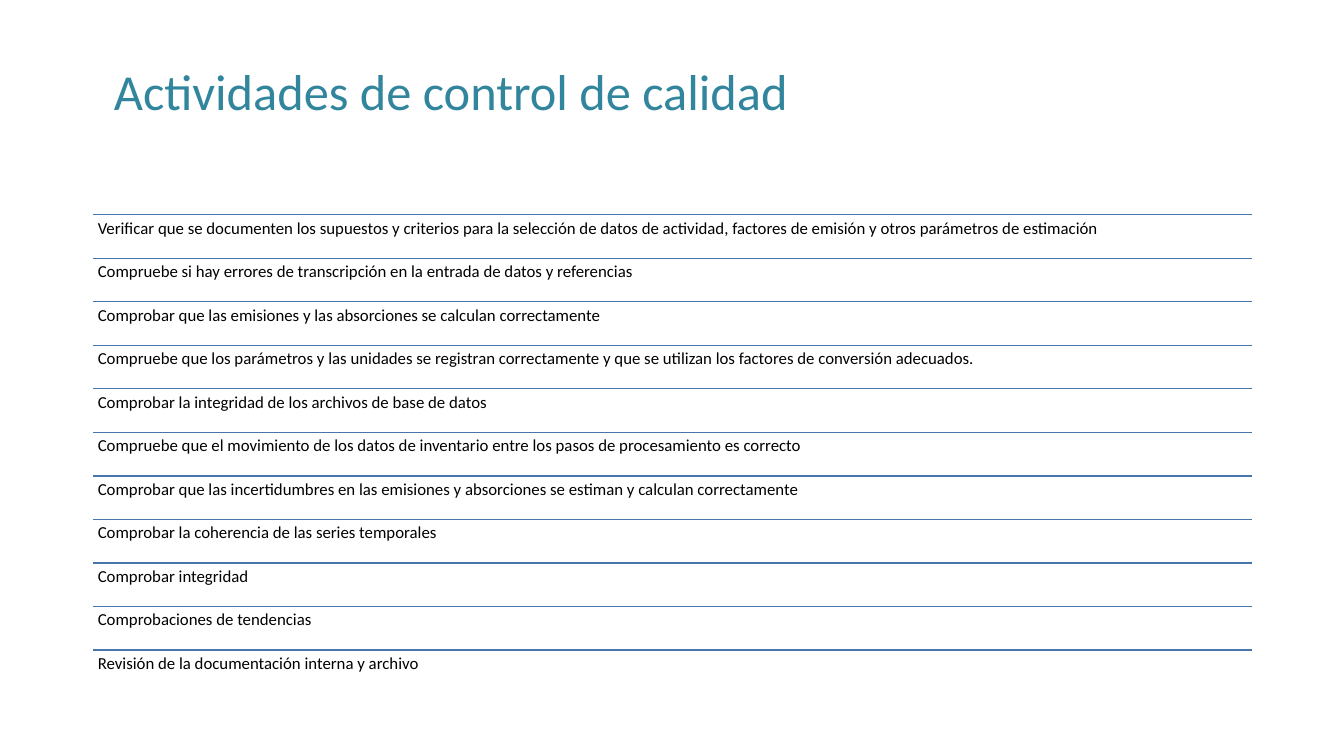
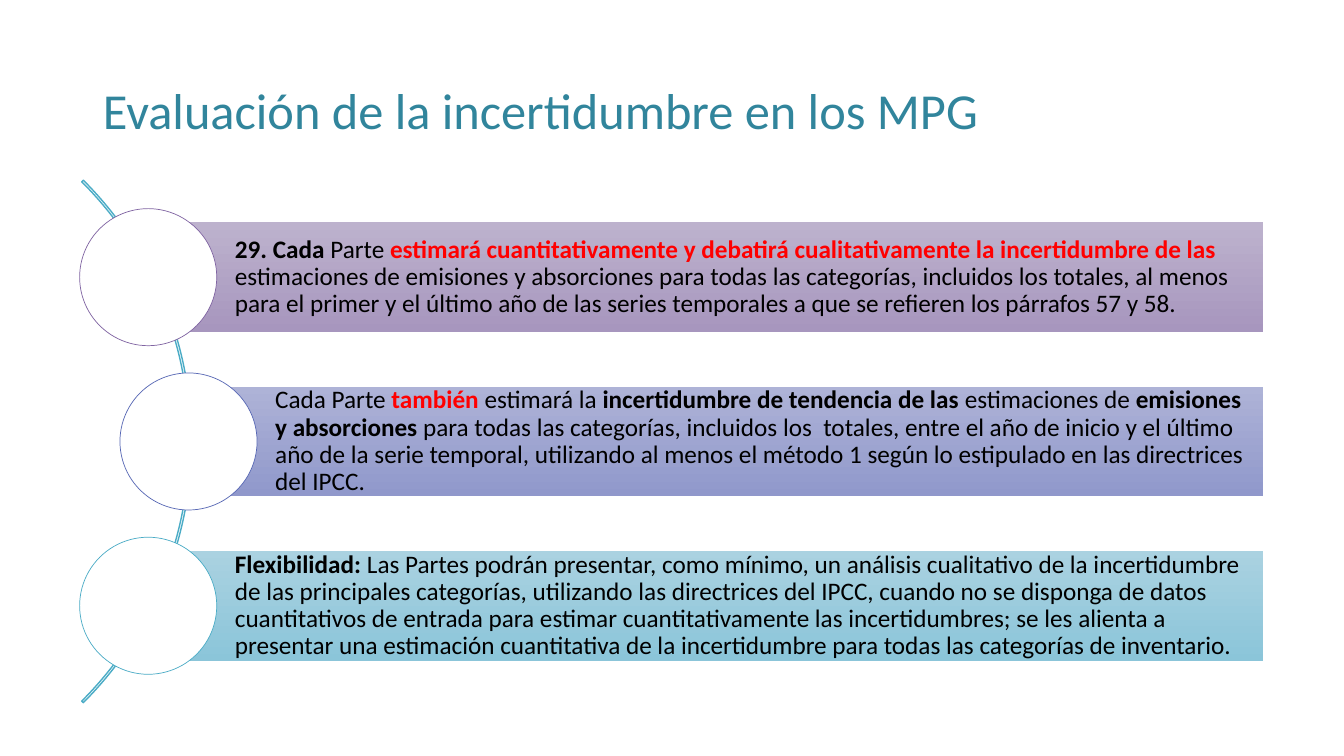
from lxml.etree import SubElement
from pptx import Presentation
from pptx.dml.color import RGBColor
from pptx.enum.shapes import MSO_CONNECTOR as Link, MSO_SHAPE as Shape
from pptx.enum.text import MSO_ANCHOR as Anchor, MSO_AUTO_SIZE as Auto, PP_ALIGN as Align
from pptx.oxml.ns import qn
from pptx.util import Inches, Pt

FONT = "Calibri"
TEAL, BLACK, RED, WHITE = "31859C", "000000", "FF0000", "FFFFFF"
RULE, ARC = "4875AC", "4BACC6"
BOLD = {"bold": True}
ALERT = {"bold": True, "color": RED}

CHECKS = [
    "Verificar que se documenten los supuestos y criterios para la selección de datos de actividad, "
    "factores de emisión y otros parámetros de estimación",
    "Compruebe si hay errores de transcripción en la entrada de datos y referencias",
    "Comprobar que las emisiones y las absorciones se calculan correctamente",
    "Compruebe que los parámetros y las unidades se registran correctamente y que se utilizan "
    "los factores de conversión adecuados.",
    "Comprobar la integridad de los archivos de base de datos",
    "Compruebe que el movimiento de los datos de inventario entre los pasos de procesamiento es correcto",
    "Comprobar que las incertidumbres en las emisiones y absorciones se estiman y calculan correctamente",
    "Comprobar la coherencia de las series temporales",
    "Comprobar integridad",
    "Comprobaciones de tendencias",
    "Revisión de la documentación interna y archivo",
]

# Each band: indent, gradient ends, circle outline, text runs
BANDS = [
    (0, ("BDB2CD", "A796BE"), "8064A2", [
        ("29. Cada ", BOLD),
        ("Parte ", {}),
        ("estimará cuantitativamente y debatirá cualitativamente la incertidumbre de las ", ALERT),
        ("estimaciones de emisiones y absorciones para todas las categorías, incluidos los totales, "
         "al menos para el primer y el último año de las series temporales a que se refieren "
         "los párrafos 57 y 58.", {}),
    ]),
    (0.4, ("AEB3D7", "9098CB"), "5767B4", [
        ("Cada Parte ", {}),
        ("también ", ALERT),
        ("estimará la ", {}),
        ("incertidumbre de tendencia de las ", BOLD),
        ("estimaciones de", {}),
        (" emisiones y absorciones", BOLD),
        (" para todas las categorías, incluidos los  totales, entre el año de inicio y el último año "
         "de la serie temporal, utilizando al menos el método 1 según lo estipulado en las directrices "
         "del IPCC.", {}),
    ]),
    (0, ("AAD2E1", "8BC5D9"), ARC, [
        ("Flexibilidad: ", BOLD),
        ("Las Partes podrán presentar, como mínimo, un análisis cualitativo de la incertidumbre de las "
         "principales categorías, utilizando las directrices del IPCC, cuando no se disponga de datos "
         "cuantitativos de entrada para estimar cuantitativamente las incertidumbres; se les alienta a "
         "presentar una estimación cuantitativa de la incertidumbre para todas las categorías de "
         "inventario.", {}),
    ]),
]


def rgb(code):
    return RGBColor.from_string(code)


def write(shape, runs, size, color=BLACK, anchor=Anchor.TOP, inset=0.05, lead=None):
    """Fill a shape with one paragraph; lead is the left inset if it differs."""
    frame = shape.text_frame
    frame.word_wrap = True
    frame.auto_size = Auto.NONE
    frame.vertical_anchor = anchor
    frame.margin_top = frame.margin_right = frame.margin_bottom = Inches(inset)
    frame.margin_left = Inches(inset if lead is None else lead)
    para = frame.paragraphs[0]
    para.alignment = Align.LEFT
    para.line_spacing = 0.9
    for text, style in runs:
        run = para.add_run()
        run.text = text
        font = run.font
        font.name, font.size = FONT, Pt(size)
        font.bold = style.get("bold", False)
        font.color.rgb = rgb(style.get("color", color))


def draw(slide, kind, box, fill=None, line=None, width=1):
    """Add a preset shape; a pair of fill colours makes a downward gradient."""
    shape = slide.shapes.add_shape(kind, *map(Inches, box))
    shape.shadow.inherit = False
    if fill is None:
        shape.fill.background()
    elif isinstance(fill, tuple):
        shape.fill.gradient()
        shape.fill.gradient_angle = 270
        for stop, place, code in zip(shape.fill.gradient_stops, (0, 1), fill):
            stop.position = place
            stop.color.rgb = rgb(code)
    else:
        shape.fill.solid()
        shape.fill.fore_color.rgb = rgb(fill)
    if line:
        shape.line.color.rgb = rgb(line)
        shape.line.width = Pt(width)
    else:
        shape.line.fill.background()
    return shape


def rule(slide, left, top, width):
    line = slide.shapes.add_connector(
        Link.STRAIGHT, *map(Inches, (left, top, left + width, top)))
    line.line.color.rgb = rgb(RULE)
    line.line.width = Pt(1)
    SubElement(line._element.spPr, qn("a:effectLst"))


def titled(deck, text, box):
    """Add a title-only slide with its title in the given box."""
    slide = deck.slides.add_slide(deck.slide_layouts[5])
    title = slide.shapes.title
    title.left, title.top, title.width, title.height = map(Inches, box)
    write(title, [(text, {})], 36, color=TEAL, anchor=Anchor.MIDDLE, inset=0.1)
    return slide


def ruled(slide, items, box):
    """Stack equal rows of text, each under a rule."""
    left, top, width, height = box
    step = height / len(items)
    for i, item in enumerate(items):
        y = top + i * step
        rule(slide, left, y, width)
        cell = slide.shapes.add_textbox(*map(Inches, (left, y, width, step)))
        write(cell, [(item, {})], 12)


def curved(slide, bands, box):
    """Hang bands with round heads along an arc centred on the box's height."""
    left, top, width, height = box
    disc, bar, ring = 1.36, 1.09, 7.33
    arc = draw(slide, Shape.BLOCK_ARC,
               (left + 1.11 - ring, top + (height - ring) / 2, ring, ring), line=ARC)
    for i, value in enumerate((189, 27, 0.003)):
        arc.adjustments[i] = value
    step = (height - disc) / (len(bands) - 1)
    for i, (shift, fill, edge, runs) in enumerate(bands):
        x, y = left + shift, top + i * step
        start = x + disc / 2
        band = draw(slide, Shape.RECTANGLE,
                    (start, y + (disc - bar) / 2, left + width - start, bar), fill)
        write(band, runs, 18, anchor=Anchor.MIDDLE, lead=0.86)
        draw(slide, Shape.OVAL, (x, y, disc, disc), WHITE, edge, 0.5)


def main():
    deck = Presentation()
    deck.slide_width, deck.slide_height = Inches(13.33), Inches(7.5)
    slide = titled(deck, "Actividades de control de calidad", (1.03, 0.62, 11.63, 0.62))
    ruled(slide, CHECKS, (0.92, 2.13, 11.5, 4.75))
    slide = titled(deck, "Evaluación de la incertidumbre en los MPG", (0.92, 0.4, 11.5, 1.45))
    curved(slide, BANDS, (0.79, 2.07, 11.74, 4.62))
    deck.save("out.pptx")


if __name__ == "__main__":
    main()
